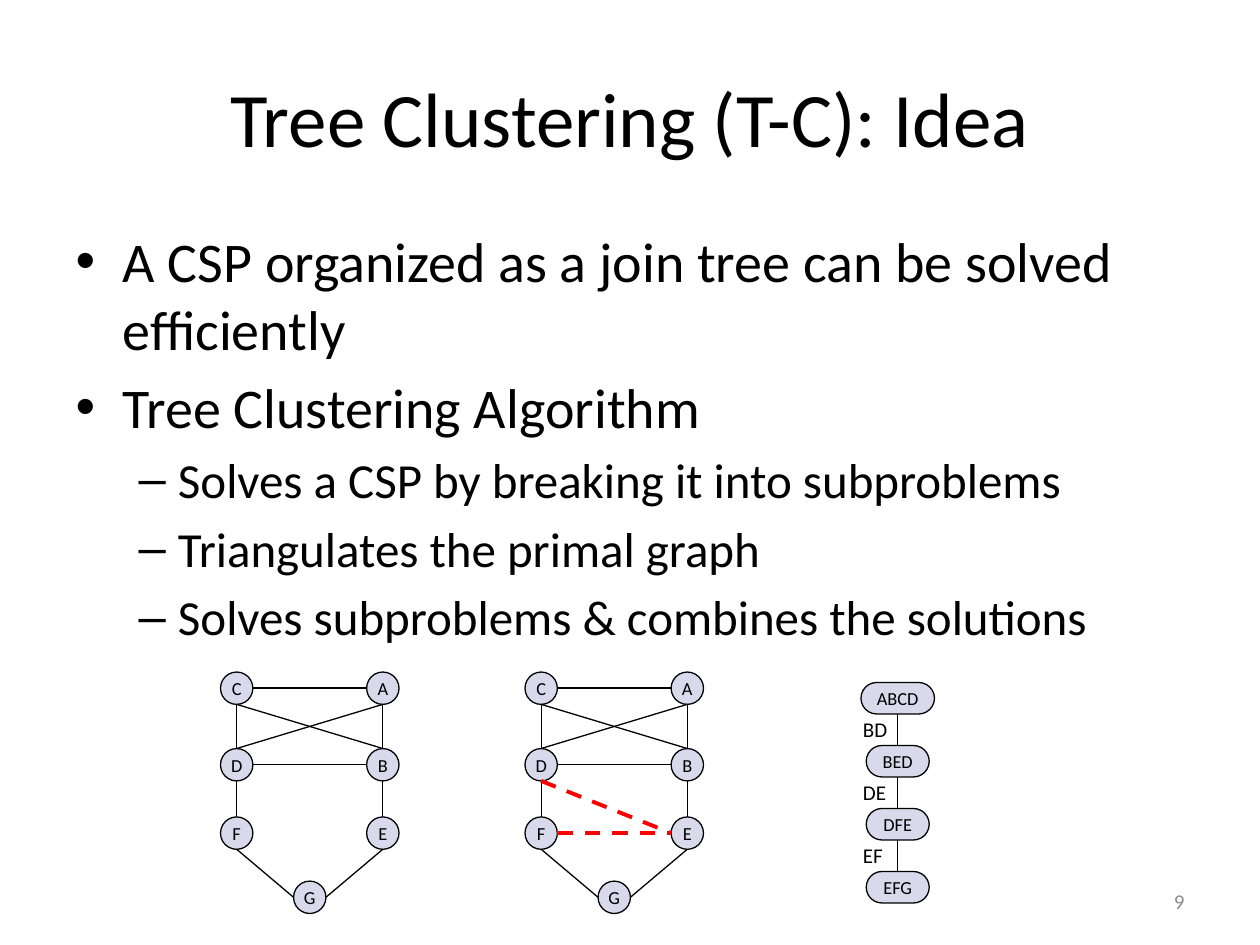
from dataclasses import dataclass

from lxml import etree
from pptx import Presentation
from pptx.dml.color import RGBColor
from pptx.enum import dml, shapes, text
from pptx.oxml import ns
from pptx.util import Pt


@dataclass(frozen=True)
class Theme:
    font: str = "Calibri"
    ink: str = "000000"
    muted: str = "8C8C8C"
    node: str = "000080"
    node_alpha: int = 15
    added: str = "FF0000"
    title: float = 44
    levels: tuple = (32, 28)
    label: float = 12
    node_text: float = 10.5
    thin: float = 0.75
    thick: float = 2.25


THEME = Theme()

BULLETS = [
    ("A CSP organized as a join tree can be solved efficiently", 0),
    ("Tree Clustering Algorithm", 0),
    ("Solves a CSP by breaking it into subproblems", 1),
    ("Triangulates the primal graph", 1),
    ("Solves subproblems & combines the solutions", 1),
]

NODE = 18.5
GRAPH_NODES = {
    "C": (0, 0), "A": (1, 0),
    "D": (0, 0.366), "B": (1, 0.366),
    "F": (0, 0.693), "E": (1, 0.693),
    "G": (0.5, 1),
}
SIDES = {"l": (0, 0.5), "r": (1, 0.5), "t": (0.5, 0), "b": (0.5, 1)}
GRAPH_EDGES = "Cr-Al Cb-Dt Dr-Bl Ab-Bt Ab-Dt Cb-Bt Be-Et Db-Ft Gr-Eb Gl-Fb".replace("Be", "Bb").split()
FILL_EDGES = ["Db-El", "Fr-El"]

CLUSTERS = [("ABCD", 42), ("BED", 36), ("DFE", 36), ("EFG", 36)]
SEPARATORS = ["BD", "DE", "EF"]


def format_text(tf, size, color, align=None):
    for p in tf.paragraphs:
        if align is not None:
            p.alignment = align
        for r in p.runs:
            r.font.name = THEME.font
            r.font.size = Pt(size)
            r.font.color.rgb = RGBColor.from_string(color)


def place(sp, box):
    sp.left, sp.top, sp.width, sp.height = (Pt(v) for v in box)


def add_line(parent, start, end, color=THEME.ink, width=THEME.thin, dash=None):
    ends = [Pt(v) for v in (*start, *end)]
    line = parent.shapes.add_connector(shapes.MSO_CONNECTOR.STRAIGHT, *ends)
    line.line.color.rgb = RGBColor.from_string(color)
    line.line.width = Pt(width)
    if dash is not None:
        line.line.dash_style = dash
    etree.SubElement(line._element.spPr, ns.qn("a:effectLst"))


def add_node(parent, label, box):
    sp = parent.shapes.add_shape(
        shapes.MSO_SHAPE.ROUNDED_RECTANGLE, *(Pt(v) for v in box))
    sp.adjustments[0] = 0.5
    sp.shadow.inherit = False
    sp.fill.solid()
    sp.fill.fore_color.rgb = RGBColor.from_string(THEME.node)
    color = sp._element.xpath("./p:spPr/a:solidFill/a:srgbClr")[0]
    etree.SubElement(color, ns.qn("a:alpha"), val=str(THEME.node_alpha * 1000))
    sp.line.color.rgb = RGBColor.from_string(THEME.ink)
    sp.line.width = Pt(THEME.thin)
    tf = sp.text_frame
    tf.text = label
    tf.word_wrap = False
    tf.vertical_anchor = text.MSO_ANCHOR.MIDDLE
    format_text(tf, THEME.node_text, THEME.ink, text.PP_ALIGN.CENTER)


def add_label(parent, label, box, color, align):
    sp = parent.shapes.add_textbox(*(Pt(v) for v in box))
    tf = sp.text_frame
    tf.text = label
    tf.word_wrap = False
    format_text(tf, THEME.label, color, align)
    return tf


def add_title(s, box):
    sp = s.shapes.title
    place(sp, box)
    sp.text_frame.text = "Tree Clustering (T-C): Idea"
    format_text(sp.text_frame, THEME.title, THEME.ink, text.PP_ALIGN.CENTER)


def add_bullets(s, box):
    sp = s.placeholders[1]
    place(sp, box)
    tf = sp.text_frame
    tf.text = "\n".join(line for line, _ in BULLETS)
    format_text(tf, THEME.levels[0], THEME.ink)
    for p, (_, level) in zip(tf.paragraphs, BULLETS):
        p.level = level
        for r in p.runs:
            r.font.size = Pt(THEME.levels[level])


def add_page_number(s, box):
    tf = add_label(s, "9", box, THEME.muted, text.PP_ALIGN.RIGHT)
    tf.word_wrap = True
    tf.vertical_anchor = text.MSO_ANCHOR.MIDDLE


def add_primal_graph(s, box, fill_edges=()):
    left, top, width, height = box
    group = s.shapes.add_group_shape()
    corners = {
        name: (left + x * (width - NODE), top + y * (height - NODE))
        for name, (x, y) in GRAPH_NODES.items()
    }

    def port(end):
        x, y = corners[end[0]]
        dx, dy = SIDES[end[1]]
        return x + dx * NODE, y + dy * NODE

    for name, corner in corners.items():
        add_node(group, name, (*corner, NODE, NODE))
    for edge in GRAPH_EDGES:
        add_line(group, *map(port, edge.split("-")))
    for edge in fill_edges:
        add_line(group, *map(port, edge.split("-")), THEME.added,
                 THEME.thick, dml.MSO_LINE.DASH)


def add_join_tree(s, box):
    left, top, width, height = box
    group = s.shapes.add_group_shape()
    node_h = 18
    pitch = (height - node_h) / (len(CLUSTERS) - 1)
    center = left + width - CLUSTERS[0][1] / 2
    for i, label in enumerate(SEPARATORS):
        y = top + i * pitch + node_h
        add_line(group, (center, y), (center, top + (i + 1) * pitch))
        add_label(group, label, (left, y - 2, 28.5, 21.8), THEME.ink,
                  text.PP_ALIGN.LEFT)
    for i, (label, node_w) in enumerate(CLUSTERS):
        add_node(group, label,
                 (center - node_w / 2, top + i * pitch, node_w, node_h))


def main():
    prs = Presentation()
    prs.slide_width, prs.slide_height = Pt(720), Pt(540)
    s = prs.slides.add_slide(prs.slide_layouts[1])
    add_title(s, (36, 21.6, 648, 90))
    add_bullets(s, (36, 126, 648, 356.4))
    add_page_number(s, (516, 500.5, 168, 28.75))
    add_primal_graph(s, (126, 384, 102, 138))
    add_primal_graph(s, (300, 384, 102, 138), FILL_EDGES)
    add_join_tree(s, (486, 390, 48, 126))
    prs.save("out.pptx")


if __name__ == "__main__":
    main()
